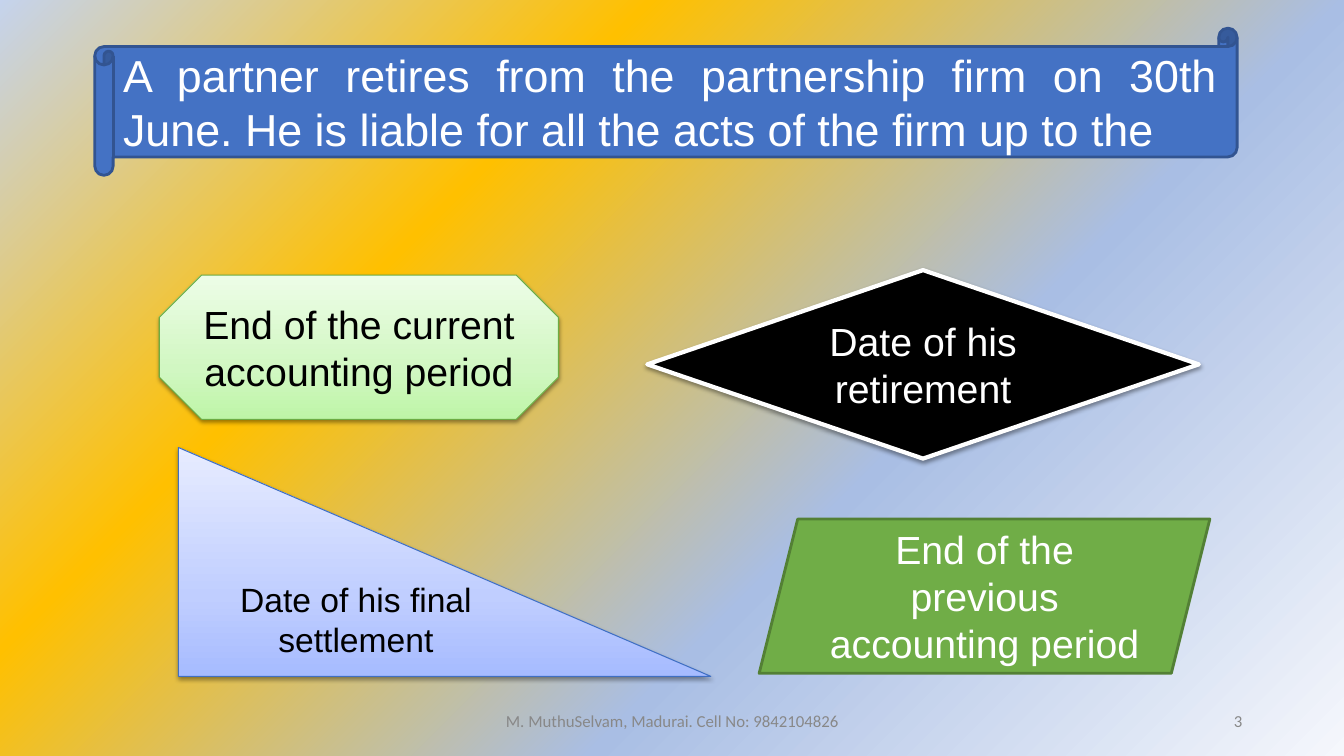
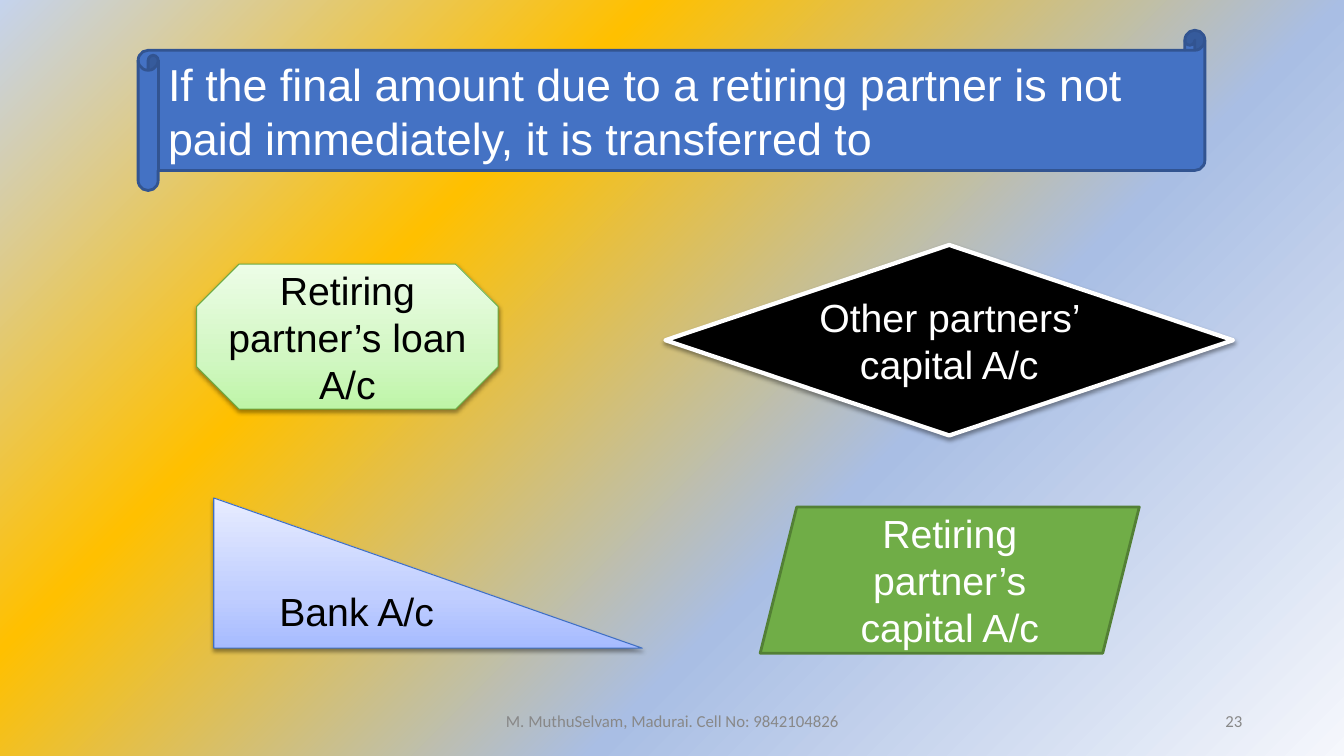
from lxml import etree
from pptx import Presentation
from pptx.dml.color import RGBColor
from pptx.enum import shapes, text
from pptx.oxml import ns
from pptx.util import Inches, Pt

FOOTER = "M. MuthuSelvam, Madurai. Cell No: 9842104826"
QUESTIONS = [
    {
        "number": "3",
        "question": ("A partner retires from the partnership firm on 30th June. "
                     "He is liable for all the acts of the firm up to the",
                     (0.94, 0.28, 11.33, 1.46), 32, "JUSTIFY"),
        "answers": [
            ("End of the current accounting period", (1.58, 2.73, 3.96, 1.43), 28),
            ("Date of his retirement", (6.42, 2.68, 5.47, 1.87), 28),
            ("Date of his final settlement", (1.77, 4.44, 5.28, 2.27), 24),
            ("End of the previous accounting period", (7.53, 5.15, 4.47, 1.53), 28),
        ],
    },
    {
        "number": "23",
        "question": ("If the final amount due to a retiring partner is not paid "
                     "immediately, it is transferred to",
                     (1.37, 0.3, 10.58, 1.59), 32, "LEFT"),
        "answers": [
            ("Retiring partner’s loan A/c", (1.95, 2.62, 2.99, 1.44), 28),
            ("Other partners’ capital A/c", (6.6, 2.43, 5.63, 1.89), 28),
            ("Bank A/c", (2.12, 4.94, 4.25, 1.49), 28),
            ("Retiring partner’s capital A/c", (7.54, 5.03, 3.76, 1.45), 28),
        ],
    },
]

BACKDROP = [(0, "F5F7FC"), (36, "A9BEE4"), (69, "FFC000"), (100, "C5D3ED")]
GREEN_FADE = [(0, "BEF5A7"), (35, "D1F7C2"), (100, "EDFDE7")]
BLUE_FADE = [(0, "A6BBFF"), (35, "C0CEFF"), (100, "E7ECFF")]
UPWARD = '<a:lin ang="16200000" scaled="0"/>'
FROM_CORNER = ('<a:path path="circle"><a:fillToRect l="100000" t="100000"/></a:path>'
               '<a:tileRect r="-100000" b="-100000"/>')

SCROLL = ("HORIZONTAL_SCROLL", "4472C4", "325491", 2, "FFFFFF", False)
ANSWER_STYLES = [
    ("OCTAGON", GREEN_FADE, "6DAC43", 0.75, "000000", True),
    ("DIAMOND", "000000", "FFFFFF", 3, "FFFFFF", True),
    ("RIGHT_TRIANGLE", BLUE_FADE, "3F6FC3", 0.75, "000000", True),
    ("PARALLELOGRAM", "70AD47", "538035", 2, "FFFFFF", False),
]
FOOTER_GREY = "888888"


def colour(value):
    return RGBColor.from_string(value)


def drawing(xml):
    return etree.fromstring(f'<a:root xmlns:a="{ns.namespaces("a")["a"]}">{xml}</a:root>')[0]


def gradient(owner, fill, stops, direction):
    fill.solid()
    fill.fore_color.rgb = colour(stops[0][1])
    marks = "".join(f'<a:gs pos="{pos * 1000}"><a:srgbClr val="{value}"/></a:gs>'
                    for pos, value in stops)
    solid = owner.find(".//" + ns.qn("a:solidFill"))
    solid.getparent().replace(solid, drawing(
        f'<a:gradFill rotWithShape="1"><a:gsLst>{marks}</a:gsLst>{direction}</a:gradFill>'))


def drop_shadow(shape):
    effects = shape.element.spPr.find(ns.qn("a:effectLst"))
    effects.append(drawing(
        '<a:outerShdw blurRad="40000" dist="20000" dir="5400000" rotWithShape="0">'
        '<a:srgbClr val="000000"><a:alpha val="38000"/></a:srgbClr></a:outerShdw>'))


def write(shape, words, size, font, ink, align):
    frame = shape.text_frame
    frame.word_wrap = True
    frame.vertical_anchor = text.MSO_ANCHOR.MIDDLE
    line = frame.paragraphs[0]
    line.text = words
    line.alignment = text.PP_ALIGN[align]
    line.font.size = Pt(size)
    line.font.name = font
    line.font.color.rgb = colour(ink)


def panel(slide, style, words, box, size, align="CENTER"):
    kind, fill, outline, width, ink, shadowed = style
    shape = slide.shapes.add_shape(shapes.MSO_SHAPE[kind], *map(Inches, box))
    shape.shadow.inherit = False
    if isinstance(fill, str):
        shape.fill.solid()
        shape.fill.fore_color.rgb = colour(fill)
    else:
        gradient(shape.element, shape.fill, fill, UPWARD)
    shape.line.color.rgb = colour(outline)
    shape.line.width = Pt(width)
    if shadowed:
        drop_shadow(shape)
    write(shape, words, size, "Arial", ink, align)


def footer(slide, number):
    for words, left, width, align in ((FOOTER, 4.42, 4.5, "CENTER"),
                                      (number, 9.42, 3, "RIGHT")):
        box = slide.shapes.add_textbox(*map(Inches, (left, 6.95, width, 0.4)))
        write(box, words, 12, "Calibri", FOOTER_GREY, align)


def main():
    deck = Presentation()
    deck.slide_width, deck.slide_height = Inches(13.33), Inches(7.5)
    master = deck.slide_master
    gradient(master.element, master.background.fill, BACKDROP, FROM_CORNER)
    for item in QUESTIONS:
        slide = deck.slides.add_slide(deck.slide_layouts[6])
        panel(slide, SCROLL, *item["question"])
        for style, answer in zip(ANSWER_STYLES, item["answers"]):
            panel(slide, style, *answer)
        footer(slide, item["number"])
    deck.save("out.pptx")


if __name__ == "__main__":
    main()
